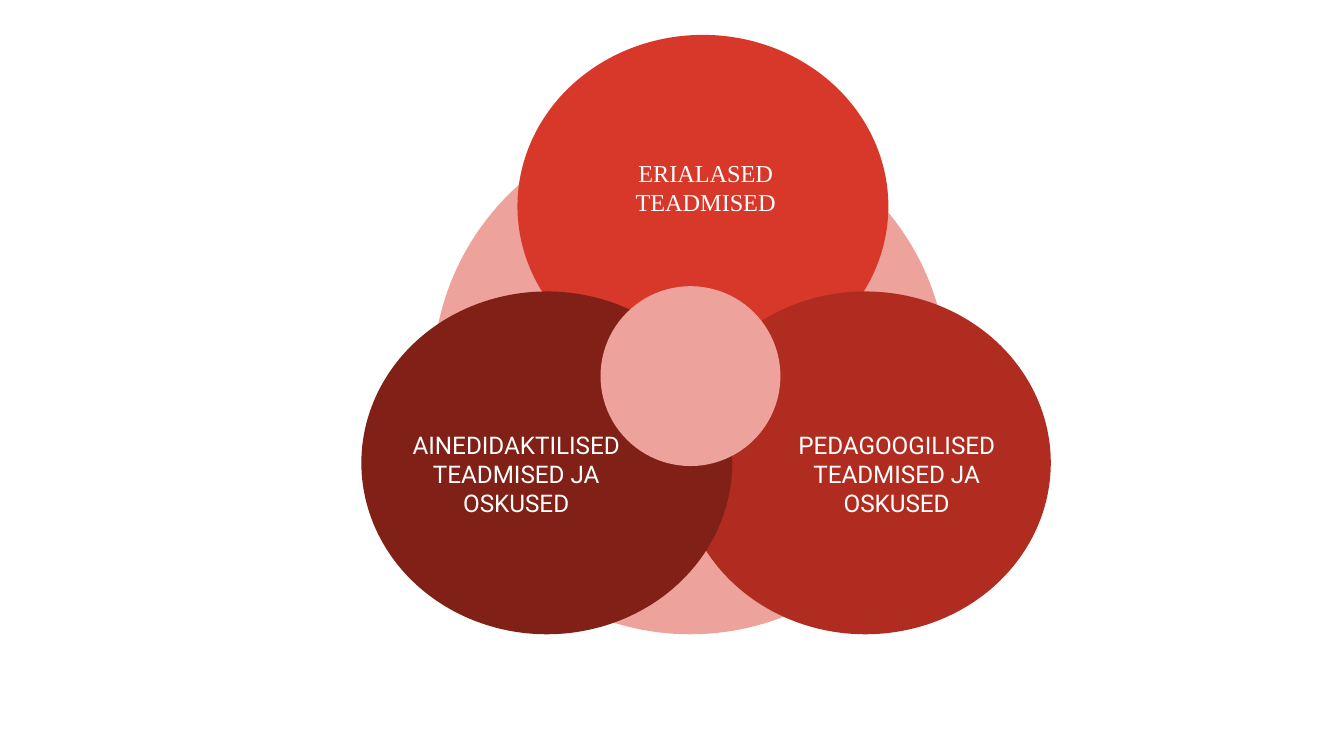
from pptx import Presentation
from pptx.dml.color import RGBColor
from pptx.enum.shapes import MSO_SHAPE as SHAPE
from pptx.enum.text import MSO_ANCHOR as ANCHOR, PP_ALIGN as ALIGN
from pptx.util import Cm, Pt


def rgb(value):
    return RGBColor.from_string(value)


def add_oval(shapes, x, y, w, h, color):
    s = shapes.add_shape(SHAPE.OVAL, Cm(x), Cm(y), Cm(w), Cm(h))
    s.shadow.inherit = False
    s.fill.solid()
    s.fill.fore_color.rgb = rgb(color)
    s.line.fill.background()


prs = Presentation()
prs.slide_width, prs.slide_height = Cm(25.4), Cm(14.29)
slide = prs.slides.add_slide(prs.slide_layouts[6])

pink = "EDA29B"
frame_format = {
    "word_wrap": True,
    "vertical_anchor": ANCHOR.MIDDLE,
    "margin_left": Cm(0.25),
    "margin_right": Cm(0.25),
    "margin_top": Cm(0.25),
    "margin_bottom": Cm(0.25),
}
circles = [
    (9.78, 0.66, "D83829", 10.92, 2.49, "Times New Roman", "ERIALASED TEADMISED"),
    (12.85, 5.51, "B02C20", 14.53, 7.9, "Roboto", "PEDAGOOGILISED TEADMISED JA OSKUSED"),
    (6.83, 5.51, "802017", 7.34, 7.9, "Roboto", "AINEDIDAKTILISED TEADMISED JA OSKUSED"),
]

add_oval(slide.shapes, 8.18, 2.26, 9.73, 9.73, pink)

for x, y, color, text_x, text_y, font, text in circles:
    group = slide.shapes.add_group_shape()
    add_oval(group.shapes, x, y, 7.01, 6.48, color)
    tf = group.shapes.add_textbox(Cm(text_x), Cm(text_y), Cm(4.83), Cm(2.11)).text_frame
    for name, value in frame_format.items():
        setattr(tf, name, value)
    p = tf.paragraphs[0]
    p.alignment = ALIGN.CENTER
    r = p.add_run()
    r.text = text
    for name, value in {"name": font, "size": Pt(13)}.items():
        setattr(r.font, name, value)
    r.font.color.rgb = rgb("FFFFFF")

add_oval(slide.shapes, 11.35, 5.41, 3.4, 3.4, pink)

prs.save("out.pptx")
